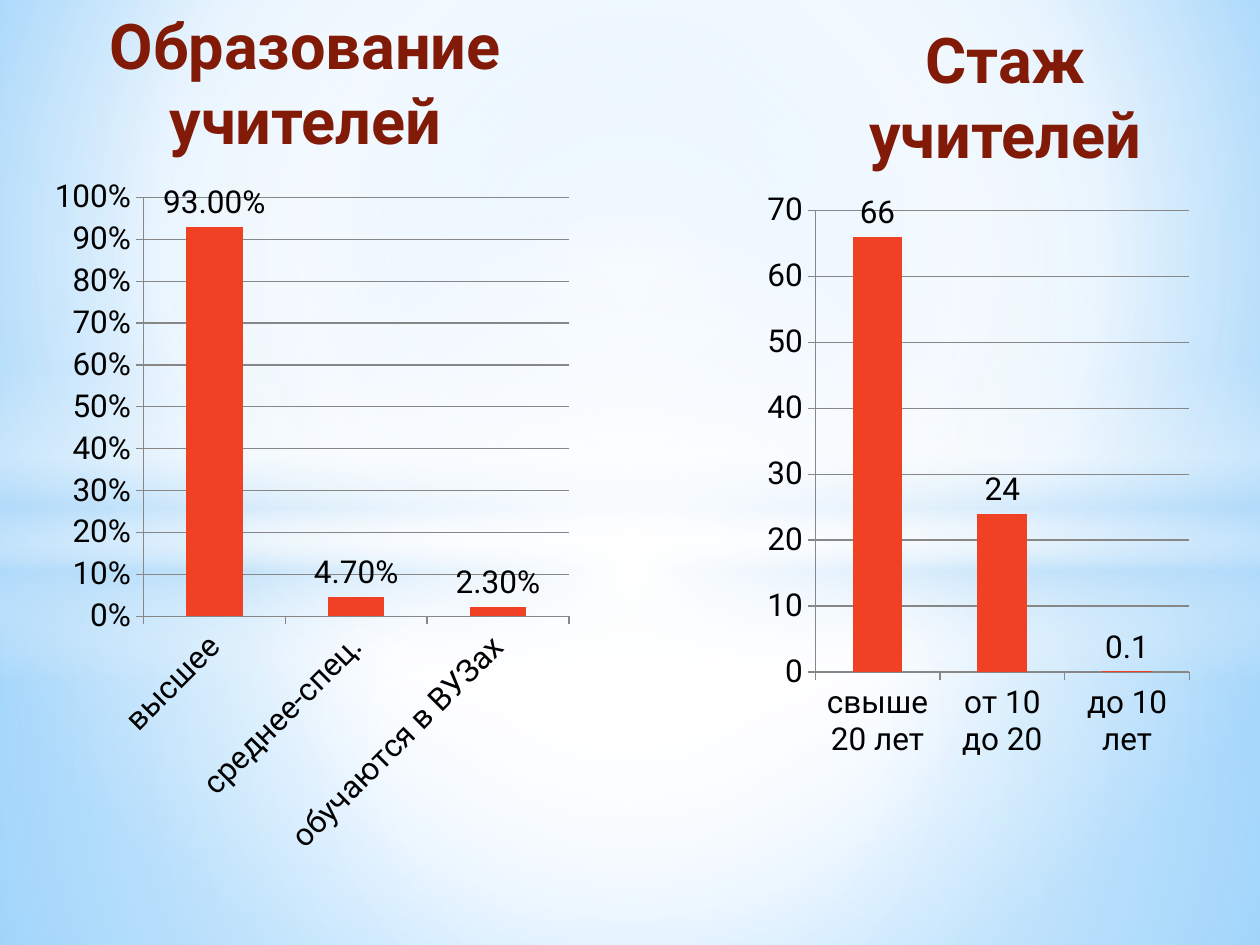
"""Builds a slide with two column charts on teachers' education and experience."""
import lxml.etree
import pptx
import pptx.chart.data
import pptx.dml.color
import pptx.enum.chart
import pptx.enum.shapes
import pptx.enum.text
import pptx.oxml.ns
import pptx.util

Inches = pptx.util.Inches
Pt = pptx.util.Pt
qn = pptx.oxml.ns.qn
SHAPES = pptx.enum.shapes.MSO_SHAPE

THEME = {
    "font": "Roboto", "heading": "821A08", "text": "000000",
    "bar": "F14124", "grid": "878787", "heading_size": 36, "chart_size": 18,
}
CENTRE = (50, 50, 50, 50)
SKY = {"stops": [(0, "9ED5FF", 100), (60, "FFFFFF", 100), (100, "5BB9FF", 100)],
       "focus": (20, 10, 20, 60)}
GLOWS = [
    {"outline": SHAPES.RECTANGLE, "box": (0, 4.23, 10, 3.27), "focus": CENTRE,
     "stops": [(0, "FFFFFF", 91), (37, "FFFFFF", 76), (100, "B4DCFA", 79)]},
    {"outline": SHAPES.RECTANGLE, "box": (0, 0, 10, 4.23), "focus": CENTRE,
     "stops": [(0, "FFFFFF", 89), (48, "FFFFFF", 62), (100, "B4DCFA", 79)]},
    {"outline": SHAPES.RECTANGLE, "box": (0, 2.9, 10, 2.5), "focus": None,
     "stops": [(0, "FFFFFF", 0), (29, "FFFFFF", 30), (45, "B4DCFA", 40),
               (55, "FFFFFF", 26), (65, "B4DCFA", 60), (100, "FFFFFF", 0)]},
    {"outline": SHAPES.OVAL, "box": (0, 1.75, 10, 5.58), "focus": CENTRE,
     "stops": [(0, "FFFFFF", 100), (54, "FFFFFF", 0)]},
]
EDUCATION = {
    "box": (0.35, 1.31, 4.25, 5.59), "top": 1, "step": 0.1,
    "axis_format": "0%", "label_format": "0.00%",
    "shares": [("высшее", 0.93), ("среднее-спец.", 0.047), ("обучаются в ВУЗах", 0.023)],
}
EXPERIENCE = {
    "box": (6.02, 1.43, 3.49, 4.68), "top": 70, "step": 10,
    "axis_format": "General", "label_format": "General",
    "shares": [("свыше 20 лет", 66), ("от 10 до 20", 24), ("до 10 лет", 0.1)],
}


def rgb(code):
    return pptx.dml.color.RGBColor.from_string(code)


def style_font(font, size, color, bold=False):
    font.name, font.size, font.bold = THEME["font"], Pt(size), bold
    font.color.rgb = rgb(color)


def set_gradient(fill, owner, stops, focus):
    fill.solid()
    solid = owner.find(".//" + qn("a:solidFill"))
    gradient = lxml.etree.Element(qn("a:gradFill"), rotWithShape="1")
    stop_list = lxml.etree.SubElement(gradient, qn("a:gsLst"))
    for position, color, opacity in stops:
        stop = lxml.etree.SubElement(stop_list, qn("a:gs"), pos=str(position * 1000))
        tint = lxml.etree.SubElement(stop, qn("a:srgbClr"), val=color)
        lxml.etree.SubElement(tint, qn("a:alpha"), val=str(opacity * 1000))
    if focus:
        spread = lxml.etree.SubElement(gradient, qn("a:path"), path="circle")
        edges = {side: str(value * 1000) for side, value in zip("ltrb", focus)}
        lxml.etree.SubElement(spread, qn("a:fillToRect"), **edges)
    else:
        lxml.etree.SubElement(gradient, qn("a:lin"), ang="5400000", scaled="0")
    solid.getparent().replace(solid, gradient)


def add_glow(slide, outline, box, stops, focus):
    glow = slide.shapes.add_shape(outline, *map(Inches, box))
    glow.shadow.inherit = False
    glow.line.fill.background()
    set_gradient(glow.fill, glow._element, stops, focus)


def write_heading(holder, lines, box, wrap=True, indent=0):
    holder.left, holder.top, holder.width, holder.height = map(Inches, box)
    frame = holder.text_frame
    frame.text = "\n".join(lines)
    frame.word_wrap = wrap
    frame.auto_size = pptx.enum.text.MSO_AUTO_SIZE.NONE
    frame.vertical_anchor = pptx.enum.text.MSO_ANCHOR.TOP
    for paragraph in frame.paragraphs:
        paragraph.alignment = pptx.enum.text.PP_ALIGN.CENTER
        paragraph.line_spacing = 1.0
        paragraph.space_before = Pt(0)
        properties = paragraph._p.get_or_add_pPr()
        properties.set("marL", str(Inches(indent)))
        properties.set("indent", "0")
        style_font(paragraph.runs[0].font, THEME["heading_size"], THEME["heading"], True)


def add_columns(slide, box, top, step, axis_format, label_format, shares):
    table = pptx.chart.data.CategoryChartData()
    table.categories = [name for name, _ in shares]
    table.add_series("Series 1", [value for _, value in shares])
    kind = pptx.enum.chart.XL_CHART_TYPE.COLUMN_CLUSTERED
    chart = slide.shapes.add_chart(kind, *map(Inches, box), table).chart
    chart.has_title = chart.has_legend = False
    style_font(chart.font, THEME["chart_size"], THEME["text"])

    scale = chart.value_axis
    scale.minimum_scale, scale.maximum_scale, scale.major_unit = 0, top, step
    scale.tick_labels.number_format = axis_format
    scale.tick_labels.number_format_is_linked = False
    scale.has_major_gridlines = True
    for axis in (scale, chart.category_axis):
        axis.major_tick_mark = pptx.enum.chart.XL_TICK_MARK.OUTSIDE
    for ruled in (scale, scale.major_gridlines, chart.category_axis):
        ruled.format.line.color.rgb = rgb(THEME["grid"])
        ruled.format.line.width = Pt(0.75)

    plot = chart.plots[0]
    plot.gap_width, plot.vary_by_categories = 150, False
    columns = plot.series[0]
    columns.format.fill.solid()
    columns.format.fill.fore_color.rgb = rgb(THEME["bar"])
    labels = columns.data_labels
    labels.show_value = True
    labels.position = pptx.enum.chart.XL_LABEL_POSITION.OUTSIDE_END
    labels.number_format, labels.number_format_is_linked = label_format, False
    style_font(labels.font, THEME["chart_size"], THEME["text"])


def main():
    deck = pptx.Presentation()
    deck.slide_width, deck.slide_height = Inches(10), Inches(7.5)
    slide = deck.slides.add_slide(deck.slide_layouts[5])
    set_gradient(slide.background.fill, slide._element, **SKY)
    for glow in GLOWS:
        add_glow(slide, **glow)

    education_heading = slide.shapes.title
    slide.shapes._spTree.append(education_heading._element)
    write_heading(education_heading, ["Образование учителей"], (0, 0, 4.65, 1.23), indent=0.2)
    add_columns(slide, **EDUCATION)

    place = (6.73, 0.11, 2.5, 1.31)
    experience_heading = slide.shapes.add_textbox(*map(Inches, place))
    write_heading(experience_heading, ["Стаж", "учителей"], place, wrap=False)
    add_columns(slide, **EXPERIENCE)
    deck.save("out.pptx")


if __name__ == "__main__":
    main()
